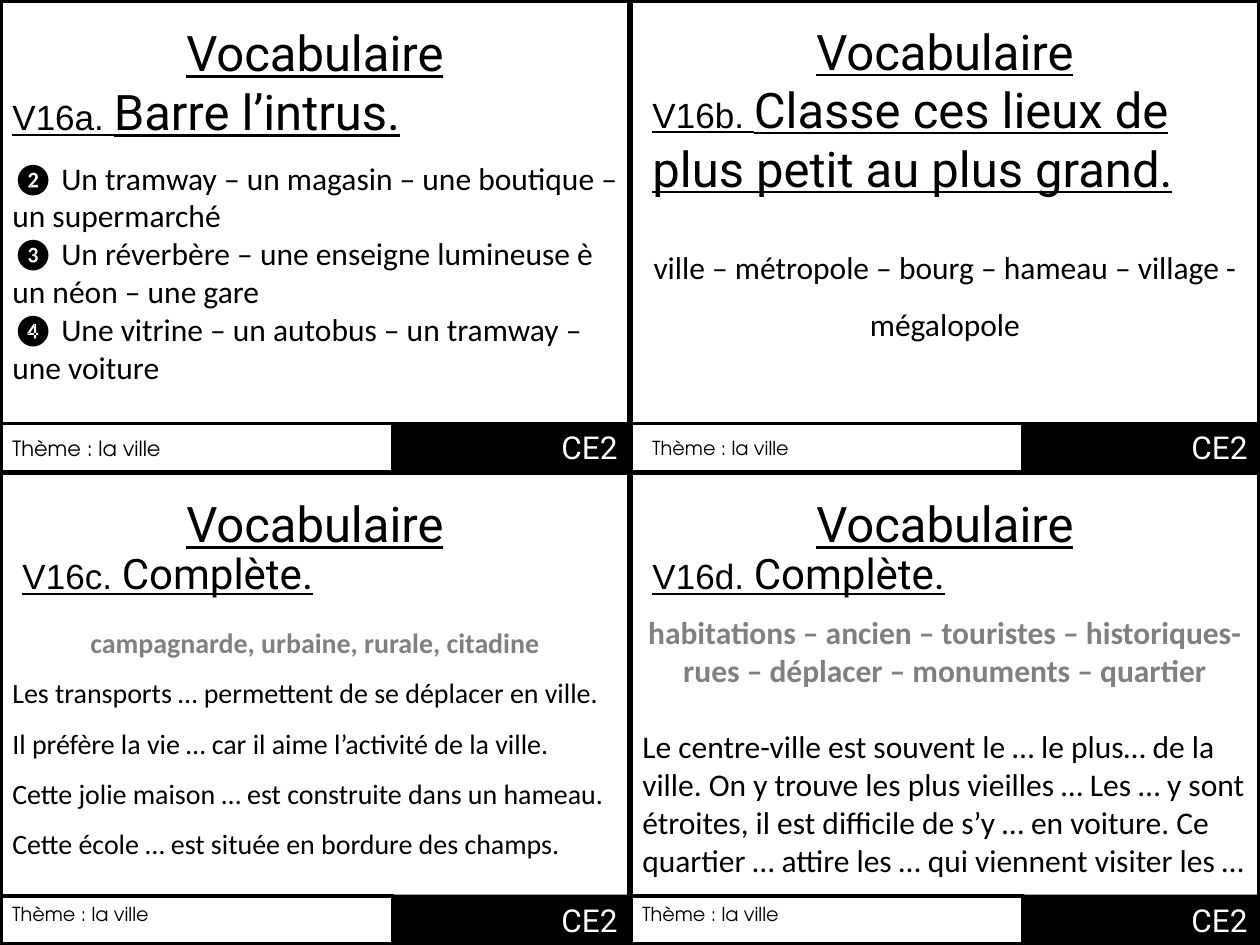
"""Build a sheet of four French vocabulary cards about the city."""
import pptx
import pptx.dml.color
import pptx.enum.shapes
import pptx.enum.text
import pptx.util

CARD_WIDTH, CARD_HEIGHT = 5, 3.75
THEME_WIDTH, FOOTER_HEIGHT = 3.12, 0.4
BLACK, WHITE, GREY = "000000", "FFFFFF", "808080"
ALIGN = pptx.enum.text.PP_ALIGN
ANCHOR = pptx.enum.text.MSO_ANCHOR

CARDS = [
    {
        "cell": (0, 0),
        "title_top": 0.13,
        "label": "V16a. ",
        "task": "Barre l’intrus.",
        "heading": (0, 0.6, 4.92, 0.57),
        "task_size": 28,
        "theme": (0, 3.41, THEME_WIDTH, 0.3),
        "theme_size": 12,
        "body": (0, 1.21, 5, 1.92),
        "body_size": 18,
        "anchor": ANCHOR.TOP,
        "lines": [
            "❷ Un tramway – un magasin – une boutique – un supermarché",
            "❸ Un réverbère – une enseigne lumineuse è un néon – une gare",
            "❹ Une vitrine – un autobus – un tramway – une voiture",
        ],
    },
    {
        "cell": (1, 0),
        "title_top": 0.12,
        "label": "V16b. ",
        "task": "Classe ces lieux de plus petit au plus grand.",
        "heading": (0.08, 0.58, 4.92, 1.04),
        "task_size": 28,
        "theme": (0.08, 3.41, THEME_WIDTH, 0.29),
        "theme_size": 11,
        "body": (0, 1.79, 5, 0.96),
        "body_size": 18,
        "spacing": 1.5,
        "align": ALIGN.CENTER,
        "lines": ["ville – métropole – bourg – hameau – village - mégalopole"],
    },
    {
        "cell": (0, 1),
        "title_top": 0.12,
        "label": "V16c. ",
        "task": "Complète.",
        "heading": (0.08, 0.55, 4.92, 0.5),
        "task_size": 24,
        "theme": (0, 3.36, THEME_WIDTH, 0.29),
        "theme_size": 11,
        "body": (0, 1.02, 5, 2.12),
        "body_size": 16,
        "spacing": 1.5,
        "word_bank": "campagnarde, urbaine, rurale, citadine",
        "lines": [
            "Les transports … permettent de se déplacer en ville.",
            "Il préfère la vie … car il aime l’activité de la ville.",
            "Cette jolie maison … est construite dans un hameau.",
            "Cette école … est située en bordure des champs.",
        ],
    },
    {
        "cell": (1, 1),
        "title_top": 0.12,
        "label": "V16d. ",
        "task": "Complète.",
        "heading": (0.08, 0.55, 4.92, 0.5),
        "task_size": 24,
        "theme": (0, 3.36, THEME_WIDTH, 0.29),
        "theme_size": 11,
        "body": (0, 1.06, 5, 2.22),
        "body_size": 18,
        "word_bank": "habitations – ancien – touristes – historiques- "
                     "rues – déplacer – monuments – quartier",
        "bank_gap": 22,
        "lines": [
            "Le centre-ville est souvent le … le plus… de la ville. "
            "On y trouve les plus vieilles … Les … y sont étroites, "
            "il est difficile de s’y … en voiture. "
            "Ce quartier … attire les … qui viennent visiter les …",
        ],
    },
]


def colour(value):
    """Turn a hex string into a colour."""
    return pptx.dml.color.RGBColor.from_string(value)


def place(cell, area):
    """Give slide lengths for an area measured inside a grid cell."""
    column, row = cell
    left, top, width, height = area
    lengths = (column * CARD_WIDTH + left, row * CARD_HEIGHT + top, width, height)
    return [pptx.util.Inches(length) for length in lengths]


def style(span, size, face, ink=BLACK, bold=False, underline=False):
    """Format one run."""
    span.font.size = pptx.util.Pt(size)
    span.font.name = face
    span.font.color.rgb = colour(ink)
    span.font.bold = bold
    span.font.underline = underline


def add_panel(page, cell, area, fill=None, line_width=None):
    """Draw a rectangle with an optional fill and black outline."""
    panel = page.shapes.add_shape(
        pptx.enum.shapes.MSO_SHAPE.RECTANGLE, *place(cell, area))
    panel.shadow.inherit = False
    if fill:
        panel.fill.solid()
        panel.fill.fore_color.rgb = colour(fill)
    else:
        panel.fill.background()
    if line_width:
        panel.line.color.rgb = colour(BLACK)
        panel.line.width = pptx.util.Pt(line_width)
    else:
        panel.line.fill.background()
    return panel


def add_text(page, cell, area, lines, anchor=ANCHOR.TOP):
    """Add a wrapping text box and return its paragraphs."""
    box = page.shapes.add_textbox(*place(cell, area))
    frame = box.text_frame
    frame.text = "\n".join(lines)
    frame.word_wrap = True
    frame.auto_size = pptx.enum.text.MSO_AUTO_SIZE.SHAPE_TO_FIT_TEXT
    frame.vertical_anchor = anchor
    return frame.paragraphs


def add_heading(page, card):
    """Write the centred title and the numbered task below it."""
    cell = card["cell"]
    title = add_text(page, cell, (0, card["title_top"], CARD_WIDTH, 0.57),
                     ["Vocabulaire"])[0]
    title.alignment = ALIGN.CENTER
    style(title.runs[0], 28, "Roboto", underline=True)
    para = add_text(page, cell, card["heading"], [card["label"]])[0]
    style(para.runs[0], 20, "Arial", underline=True)
    task = para.add_run()
    task.text = card["task"]
    style(task, card["task_size"], "Roboto", underline=True)


def add_body(page, card):
    """Write the exercise, led by its grey word bank when it has one."""
    bank = [card["word_bank"]] if "word_bank" in card else []
    paragraphs = add_text(page, card["cell"], card["body"], bank + card["lines"],
                          card.get("anchor", ANCHOR.MIDDLE))
    for index, para in enumerate(paragraphs):
        is_bank = index < len(bank)
        para.alignment = ALIGN.CENTER if is_bank else card.get("align", ALIGN.LEFT)
        para.line_spacing = card.get("spacing", 1.0)
        if is_bank:
            para.space_after = pptx.util.Pt(card.get("bank_gap", 0))
        style(para.runs[0], card["body_size"], "Calibri",
              GREY if is_bank else BLACK, bold=is_bank)


def add_footer(page, card):
    """Draw the theme strip and the black class level tag."""
    cell = card["cell"]
    top = CARD_HEIGHT - FOOTER_HEIGHT
    tag = add_panel(page, cell, (THEME_WIDTH, top, CARD_WIDTH - THEME_WIDTH,
                                 FOOTER_HEIGHT), BLACK)
    tag.text_frame.text = "CE2"
    tag.text_frame.vertical_anchor = ANCHOR.MIDDLE
    level = tag.text_frame.paragraphs[0]
    level.alignment = ALIGN.RIGHT
    style(level.runs[0], 18, "Roboto", WHITE)
    add_panel(page, cell, (0, top + 0.01, THEME_WIDTH, FOOTER_HEIGHT - 0.01),
              line_width=2)
    theme = add_text(page, cell, card["theme"], ["Thème : la ville"])[0]
    style(theme.runs[0], card["theme_size"], "TeX Gyre Adventor")


def main():
    """Lay the four cards out on one slide."""
    deck = pptx.Presentation()
    deck.slide_width = pptx.util.Inches(2 * CARD_WIDTH)
    deck.slide_height = pptx.util.Inches(2 * CARD_HEIGHT)
    page = deck.slides.add_slide(deck.slide_layouts[6])
    for card in CARDS:
        add_panel(page, card["cell"], (0, 0, CARD_WIDTH, CARD_HEIGHT), WHITE, 3)
    for card in CARDS:
        add_heading(page, card)
        add_body(page, card)
        add_footer(page, card)
    deck.save("out.pptx")


if __name__ == "__main__":
    main()
